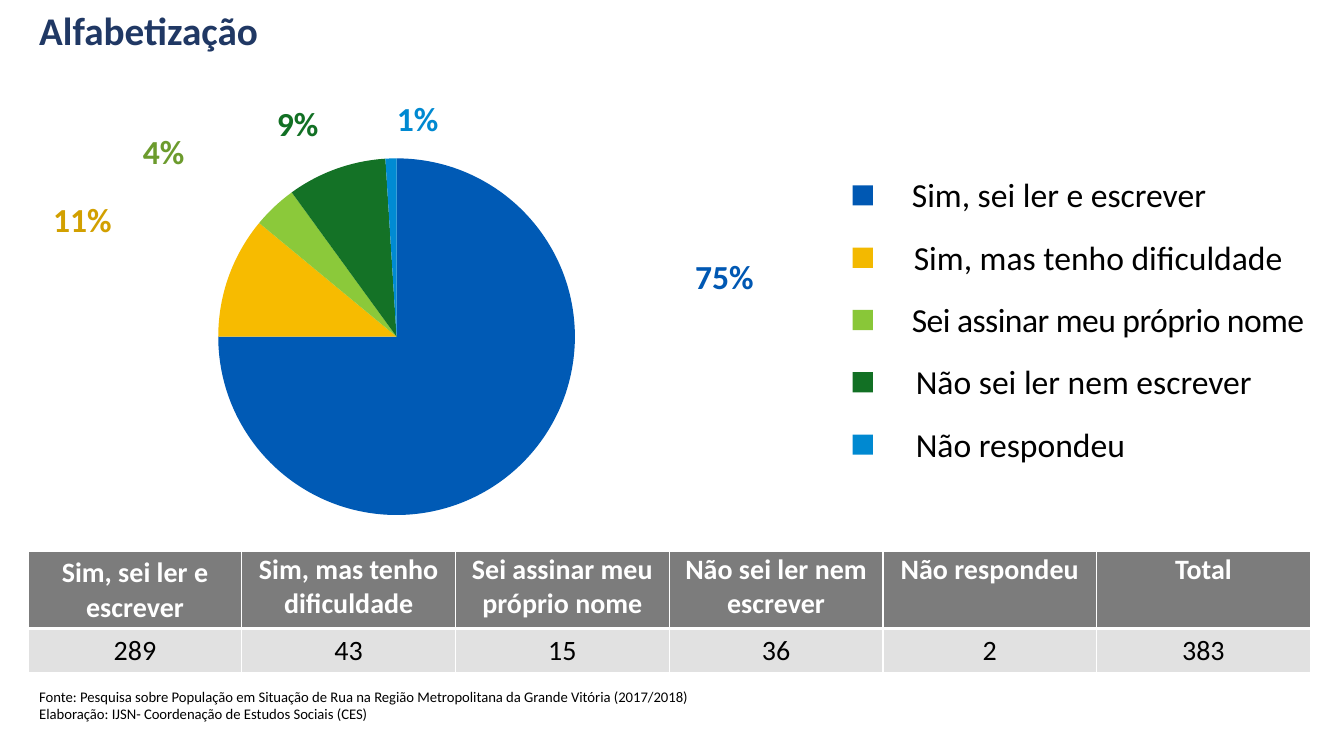
from lxml.etree import SubElement
from pptx import Presentation
from pptx.chart.data import CategoryChartData
from pptx.dml.color import RGBColor
from pptx.enum.chart import XL_CHART_TYPE
from pptx.enum.shapes import MSO_SHAPE
from pptx.enum.text import MSO_ANCHOR, PP_ALIGN
from pptx.oxml import parse_xml
from pptx.oxml.ns import nsdecls, qn
from pptx.util import Cm, Pt


def color(hex_value):
    return RGBColor.from_string(hex_value)


def write(frame, text, size=24, ink="000000", bold=False, align=PP_ALIGN.LEFT,
          anchor=MSO_ANCHOR.TOP, wrap=False, line_spacing=None, tracking=0):
    frame.word_wrap = wrap
    frame.vertical_anchor = anchor
    for index, line in enumerate(text.split("\n")):
        paragraph = frame.add_paragraph() if index else frame.paragraphs[0]
        paragraph.alignment = align
        paragraph.line_spacing = line_spacing
        run = paragraph.add_run()
        run.text = line
        run.font.name = "Calibri"
        run.font.size = Pt(size)
        run.font.bold = bold
        run.font.color.rgb = color(ink)
        if tracking:
            run.font._element.set("spc", str(tracking))


presentation = Presentation()
presentation.slide_width = Cm(33.87)
presentation.slide_height = Cm(19.05)
slide = presentation.slides.add_slide(presentation.slide_layouts[6])

heading = slide.shapes.add_textbox(Cm(0.74), Cm(0.08), Cm(32.31), Cm(1.57))
write(heading.text_frame, "Alfabetização", size=28, ink="203864", bold=True,
      anchor=MSO_ANCHOR.MIDDLE, wrap=True, line_spacing=0.8)

literacy_data = CategoryChartData()
literacy_data.categories = ["1", "2", "3", "4", "5"]
literacy_data.add_series("Series 1", [75, 11, 4, 9, 1])
literacy_pie = slide.shapes.add_chart(
    XL_CHART_TYPE.PIE, Cm(0), Cm(3.99), Cm(19.99), Cm(8.99), literacy_data).chart
literacy_pie.has_legend = False
literacy_pie.has_title = False
literacy_pie.font.name = "Calibri"
literacy_pie.font.size = Pt(10)
literacy_pie.font.color.rgb = color("000000")
literacy_plot = literacy_pie.plots[0]
literacy_plot.vary_by_categories = True
slice_colors = ["005AB5", "F7BB00", "8BC93A", "147226", "008BD3"]
for index, slice_color in enumerate(slice_colors):
    pie_slice = literacy_plot.series[0].points[index].format
    pie_slice.fill.solid()
    pie_slice.fill.fore_color.rgb = color(slice_color)
    pie_slice.line.fill.background()

plot_area = literacy_pie._chartSpace.chart.plotArea
for old_layout in plot_area.findall(qn("c:layout")):
    plot_area.remove(old_layout)
plot_area.insert(0, parse_xml(
    f'<c:layout {nsdecls("c")}><c:manualLayout><c:layoutTarget val="inner"/>'
    '<c:xMode val="edge"/><c:yMode val="edge"/><c:x val="0"/><c:y val="0"/>'
    '<c:w val="1"/><c:h val="1"/></c:manualLayout></c:layout>'))

answer_counts = [
    ("Sim, sei ler e escrever", "289"),
    ("Sim, mas tenho dificuldade", "43"),
    ("Sei assinar meu próprio nome", "15"),
    ("Não sei ler nem escrever", "36"),
    ("Não respondeu", "2"),
    ("Total", "383"),
]
counts_table = slide.shapes.add_table(
    2, len(answer_counts), Cm(0.71), Cm(13.89), Cm(32.31), Cm(3.05)).table
counts_table.rows[0].height = Cm(1.95)
counts_table.rows[1].height = Cm(1.1)
row_styles = [
    ("7C7C7C", "FFFFFF", True, {"L": 1, "R": 1, "T": 1, "B": 3}),
    ("E1E1E1", "000000", False, {"L": 1, "R": 1, "T": 3, "B": 1}),
]
for column, answer in enumerate(answer_counts):
    for row, (fill, ink, bold, borders) in enumerate(row_styles):
        cell = counts_table.cell(row, column)
        write(cell.text_frame, answer[row], size=20, ink=ink, bold=bold,
              align=PP_ALIGN.CENTER, wrap=True)
        if row == 0 and column > 0:
            cell.margin_left = cell.margin_right = cell.margin_top = Cm(0.03)
            cell.margin_bottom = Cm(0)
        cell_properties = cell._tc.get_or_add_tcPr()
        for side, width in borders.items():
            border = SubElement(cell_properties, qn(f"a:ln{side}"), w=str(Pt(width)))
            border_fill = SubElement(border, qn("a:solidFill"))
            SubElement(border_fill, qn("a:srgbClr"), val="FFFFFF")
        cell.fill.solid()
        cell.fill.fore_color.rgb = color(fill)

legend_entries = [
    ("0058B3", 22.73, 8.0, 0),
    ("F3B900", 22.78, 9.91, 0),
    ("89C738", 22.73, 10.87, -40),
    ("127024", 22.83, 9.07, 0),
    ("0089D1", 22.83, 5.84, 0),
]
for index, (key_color, left, width, tracking) in enumerate(legend_entries):
    offset = 1.57 * index
    entry = slide.shapes.add_group_shape()
    key = entry.shapes.add_shape(
        MSO_SHAPE.RECTANGLE, Cm(21.49), Cm(4.67 + offset), Cm(0.51), Cm(0.51))
    key.shadow.inherit = False
    key.fill.solid()
    key.fill.fore_color.rgb = color(key_color)
    key.line.fill.background()
    label = entry.shapes.add_textbox(Cm(left), Cm(4.27 + offset), Cm(width), Cm(1.27))
    write(label.text_frame, answer_counts[index][0], tracking=tracking)

percentages = [
    ("75%", 17.27, 6.32, 2.01, "0058B3"),
    ("11%", 1.09, 4.88, 2.01, "D2A000"),
    ("4%", 3.35, 3.18, 1.57, "6C9B2D"),
    ("9%", 6.73, 2.46, 1.57, "127024"),
    ("1%", 9.75, 2.34, 1.57, "0089D1"),
]
for share, left, top, width, ink in percentages:
    share_label = slide.shapes.add_textbox(Cm(left), Cm(top), Cm(width), Cm(1.27))
    write(share_label.text_frame, share, ink=ink, bold=True)

credits = slide.shapes.add_textbox(Cm(0.74), Cm(16.87), Cm(32.31), Cm(1.47))
write(credits.text_frame,
      "Fonte: Pesquisa sobre População em Situação de Rua na Região Metropolitana "
      "da Grande Vitória (2017/2018)\n"
      "Elaboração: IJSN- Coordenação de Estudos Sociais (CES)",
      size=10.5, anchor=MSO_ANCHOR.BOTTOM, wrap=True)

presentation.save("out.pptx")
